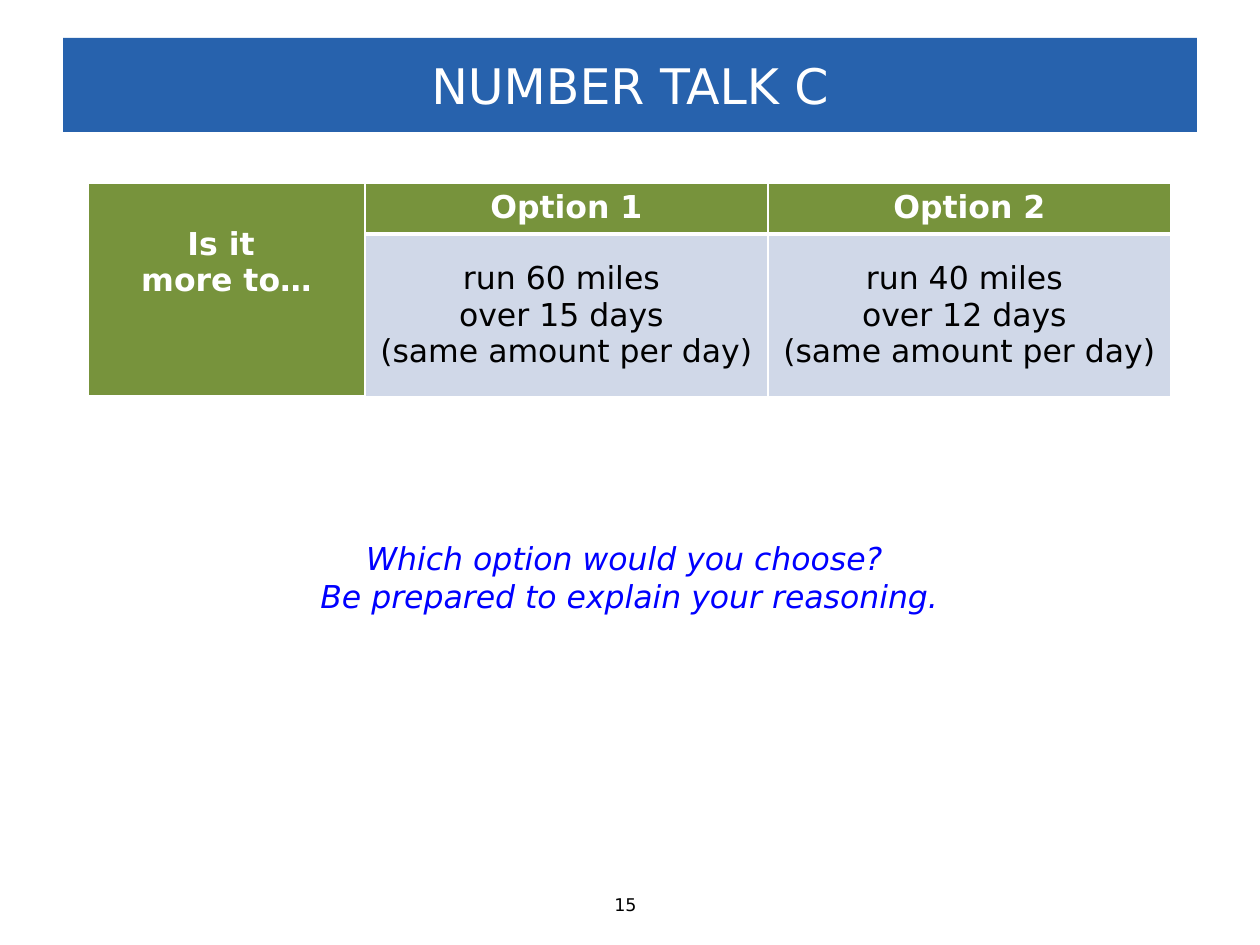
from lxml import etree
from pptx import Presentation
from pptx.dml.color import RGBColor
from pptx.enum.text import MSO_ANCHOR, PP_ALIGN
from pptx.oxml.ns import qn
from pptx.util import Emu, Pt

CENTER, LEFT = PP_ALIGN.CENTER, PP_ALIGN.LEFT
MIDDLE, TOP = MSO_ANCHOR.MIDDLE, MSO_ANCHOR.TOP
TITLE_ONLY = 5
EMU_PER_PX = 914400 / 126
FONT = "DejaVu Sans"
WHITE, BLACK, BLUE, LINK_BLUE = "FFFFFF", "000000", "2762AD", "0000FF"
GREEN, PALE = "77933C", "D0D8E8"


def px(length):
    return Emu(round(length * EMU_PER_PX))


def paint(fill, color):
    fill.solid()
    fill.fore_color.rgb = RGBColor.from_string(color)


def write(frame, text, size, color, align=CENTER, bold=False, italic=False):
    """Fill a text frame, one paragraph for each line of text."""
    frame.text = text
    for para in frame.paragraphs:
        para.alignment = align
        font = para.font
        font.name, font.size = FONT, Pt(size)
        font.bold, font.italic = bold, italic
        font.color.rgb = RGBColor.from_string(color)


def add_title(page, text):
    title = page.shapes.title
    title.left, title.top, title.width, title.height = map(px, (63, 38, 1134, 94))
    paint(title.fill, BLUE)
    title.text_frame.vertical_anchor = MIDDLE
    write(title.text_frame, text, 28, WHITE)


def add_text(page, box, text, size, color, wrap=True, **style):
    frame = page.shapes.add_textbox(*map(px, box)).text_frame
    frame.word_wrap = wrap
    write(frame, text, size, color, **style)


def set_borders(cell, bottom):
    """Draw white cell edges, 1 pt except for the bottom one."""
    properties = cell._tc.get_or_add_tcPr()
    for side, width in (("L", 1), ("R", 1), ("T", 1), ("B", bottom)):
        line = etree.SubElement(properties, qn(f"a:ln{side}"), w=str(Pt(width)))
        fill = etree.SubElement(line, qn("a:solidFill"))
        etree.SubElement(fill, qn("a:srgbClr"), val=WHITE)


def format_cell(cell, text, header):
    set_borders(cell, 3 if header else 1)
    paint(cell.fill, GREEN if header else PALE)
    cell.vertical_anchor = TOP if header else MIDDLE
    write(cell.text_frame, text, 18, WHITE if header else BLACK, bold=header)


def add_options(page, rows, widths, heights):
    """Add the table of options, its first column merged into one header."""
    box = map(px, (88, 183, sum(widths), sum(heights)))
    table = page.shapes.add_table(len(rows), len(widths), *box).table
    table.first_row = table.horz_banding = False
    for column, width in zip(table.columns, widths):
        column.width = px(width)
    for row, height in zip(table.rows, heights):
        row.height = px(height)
    for r, texts in enumerate(rows):
        for c, text in enumerate(texts):
            format_cell(table.cell(r, c), text, header=r == 0 or c == 0)
    question = table.cell(0, 0)
    question.margin_top = px(43)
    question.merge(table.cell(len(rows) - 1, 0))


def main():
    deck = Presentation()
    deck.slide_width, deck.slide_height = px(1260), px(945)
    page = deck.slides.add_slide(deck.slide_layouts[TITLE_ONLY])
    add_text(page, (602, 888, 55, 34), "15", 10, BLACK, wrap=False, align=LEFT)
    add_title(page, "NUMBER TALK C")
    add_text(
        page, (307, 533, 645, 89),
        "Which option would you choose? \nBe prepared to explain your reasoning.",
        18, LINK_BLUE, italic=True,
    )
    rows = [
        ["Is it \nmore to…", "Option 1", "Option 2"],
        ["",
         "run 60 miles \nover 15 days \n(same amount per day)",
         "run 40 miles \nover 12 days \n(same amount per day)"],
    ]
    add_options(page, rows, widths=(277, 403, 403), heights=(51, 163))
    deck.save("out.pptx")


if __name__ == "__main__":
    main()
